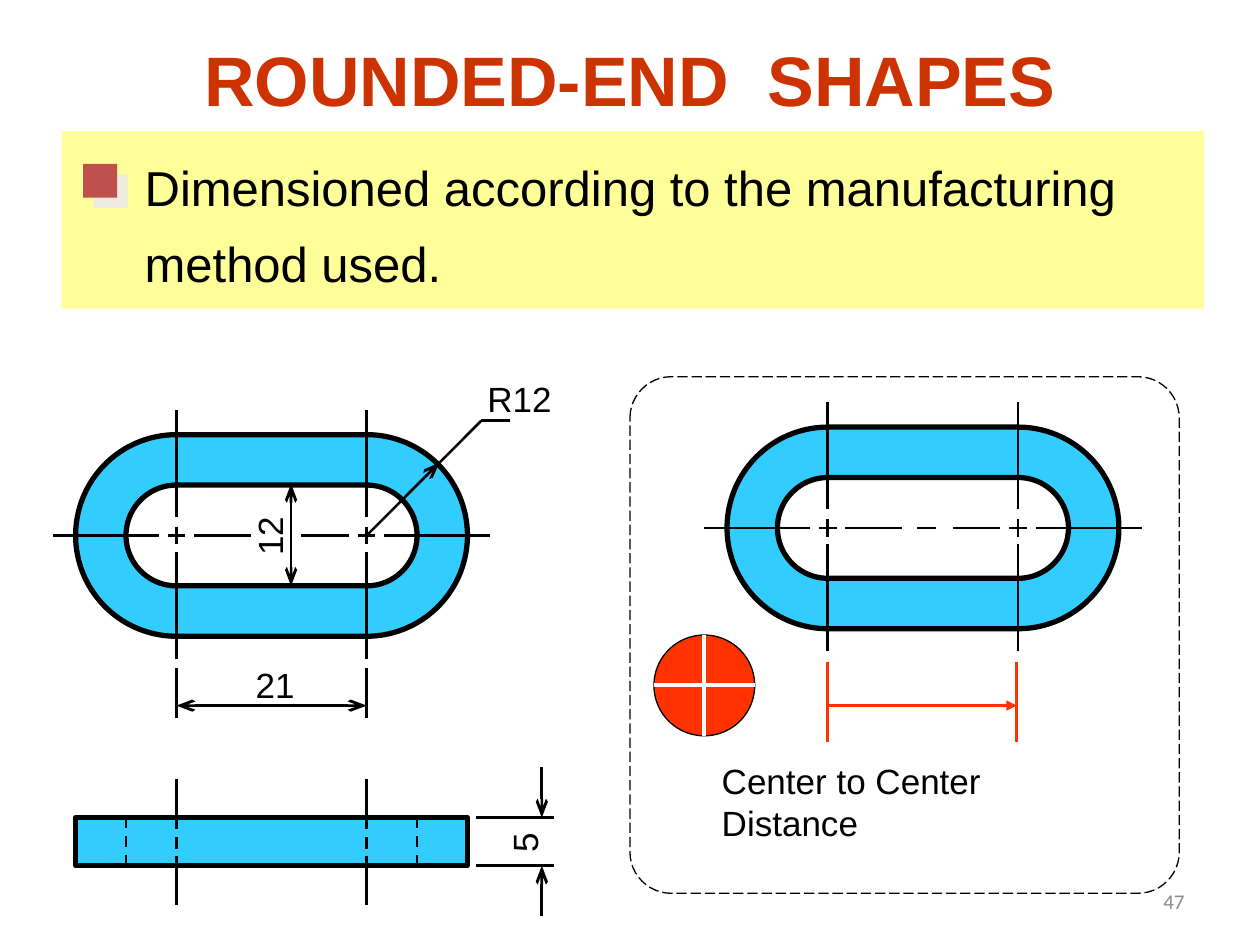
"""Build the slide on dimensioning rounded-end shapes."""
from lxml import etree
from pptx import Presentation
from pptx.dml.color import RGBColor
from pptx.enum.dml import MSO_LINE
from pptx.enum.shapes import MSO_CONNECTOR, MSO_SHAPE
from pptx.enum.text import MSO_ANCHOR, PP_ALIGN
from pptx.oxml.ns import qn
from pptx.util import Inches, Pt

RECT, ROUND, OVAL = MSO_SHAPE.RECTANGLE, MSO_SHAPE.ROUNDED_RECTANGLE, MSO_SHAPE.OVAL
STRAIGHT = MSO_CONNECTOR.STRAIGHT
DASH, LONG_DASH = MSO_LINE.DASH, MSO_LINE.LONG_DASH
TOP, MIDDLE = MSO_ANCHOR.TOP, MSO_ANCHOR.MIDDLE
LEFT, CENTER, RIGHT = PP_ALIGN.LEFT, PP_ALIGN.CENTER, PP_ALIGN.RIGHT

COLORS = {
    "black": "000000", "white": "FFFFFF", "part": "33CCFF", "title": "CC3300",
    "band": "FFFF99", "bullet": "C0504D", "shade": "EEECE1", "red": "FF3300",
    "number": "8C8C8C",
}
COLOR = {name: RGBColor.from_string(value) for name, value in COLORS.items()}

prs = Presentation()
prs.slide_width, prs.slide_height = Inches(10), Inches(7.5)
slide = prs.slides.add_slide(prs.slide_layouts[6])
shapes = slide.shapes


def add_line(x1, y1, x2, y2, color="black", width=1.5, dash=None, head=None, tail=None):
    line = shapes.add_connector(STRAIGHT, Inches(x1), Inches(y1), Inches(x2), Inches(y2))
    line.line.color.rgb = COLOR[color]
    line.line.width = Pt(width)
    if dash:
        line.line.dash_style = dash
    for tag, kind in (("a:headEnd", head), ("a:tailEnd", tail)):
        if kind:
            end = etree.SubElement(line.line._get_or_add_ln(), qn(tag))
            end.set("type", kind)
            end.set("len", "lg" if kind == "arrow" else "med")
    etree.SubElement(line._element.spPr, qn("a:effectLst"))


def add_text(lines, x, y, w, h, size=20, color="black", font="Arial", bold=False,
             align=LEFT, anchor=TOP, wrap=False, rotation=0, spacing=None):
    box = shapes.add_textbox(Inches(x), Inches(y), Inches(w), Inches(h))
    box.rotation = rotation
    frame = box.text_frame
    frame.word_wrap = wrap
    frame.vertical_anchor = anchor
    for index, words in enumerate(lines):
        paragraph = frame.paragraphs[0] if index == 0 else frame.add_paragraph()
        paragraph.alignment = align
        paragraph.line_spacing = spacing
        run = paragraph.add_run()
        run.text = words
        run.font.size, run.font.name, run.font.bold = Pt(size), font, bold
        run.font.color.rgb = COLOR[color]


LINK_X, LINK_Y = 1.4, 4.25
PITCH, OUTER, INNER = 1.51, 0.8, 0.4
SIDE_TOP, SIDE_BOTTOM = 6.49, 6.87
links = [(LINK_X, LINK_Y), (6.57, 4.19)]

outlines = [
    (RECT, 0.49, 1.04, 9.07, 1.41, "band", None, 0, None),
    (RECT, 0.66, 1.3, 0.27, 0.27, "bullet", None, 0, None),
    (ROUND, 5, 2.99, 4.36, 4.1, None, "black", 0.75, 0.08),
    (RECT, LINK_X - OUTER, SIDE_TOP, PITCH + 2 * OUTER, SIDE_BOTTOM - SIDE_TOP,
     "part", "black", 3, None),
    (OVAL, 5.19, 5.04, 0.8, 0.8, "red", "black", 0.75, None),
]
for x, y in links:
    for radius, fill in ((OUTER, "part"), (INNER, "white")):
        outlines.append((ROUND, x - radius, y - radius, PITCH + 2 * radius, 2 * radius,
                         fill, "black", 3, 0.5))

for kind, x, y, w, h, fill, edge, weight, corner in outlines:
    outline = shapes.add_shape(kind, Inches(x), Inches(y), Inches(w), Inches(h))
    outline.shadow.inherit = False
    if fill:
        outline.fill.solid()
        outline.fill.fore_color.rgb = COLOR[fill]
    else:
        outline.fill.background()
        outline.line.dash_style = LONG_DASH
    if edge:
        outline.line.color.rgb = COLOR[edge]
        outline.line.width = Pt(weight)
    else:
        outline.line.fill.background()
    if corner:
        outline.adjustments[0] = corner
    if fill == "bullet":
        effects = outline._element.spPr.find(qn("a:effectLst"))
        shadow = etree.SubElement(effects, qn("a:outerShdw"), dist=str(Pt(8.5)),
                                  dir="2700000", algn="ctr", rotWithShape="0")
        etree.SubElement(shadow, qn("a:srgbClr"), val=COLORS["shade"])

for x, y in links:
    for center, outward in ((x, -1), (x + PITCH, 1)):
        add_line(center, y - 0.15, center, y - 1)
        add_line(center, y + 0.13, center, y + 0.98)
        add_line(center - 0.07, y, center + 0.07, y)
        add_line(center, y - 0.07, center, y + 0.07)
        add_line(center + outward * 0.14, y, center + outward * 0.98, y)
    add_line(x + 0.14, y, x + 0.59, y)
    add_line(x + 0.99, y, x + 1.37, y)
add_line(7.28, 4.19, 7.43, 4.19)

for center in (LINK_X, LINK_X + PITCH):
    for start, end in ((6.18, 6.58), (6.64, 6.74), (6.79, 7.18)):
        add_line(center, start, center, end)
    add_line(center, 5.3, center, 5.7)
for hidden_edge in (LINK_X - INNER, LINK_X + PITCH + INNER):
    add_line(hidden_edge, SIDE_TOP, hidden_edge, SIDE_BOTTOM, dash=DASH)

add_line(LINK_X, 5.6, LINK_X + PITCH, 5.6, head="arrow", tail="arrow")
add_line(2.31, 4.65, 2.31, 3.84, head="arrow", tail="arrow")
add_line(2.91, 4.25, 3.49, 3.67, tail="arrow")
add_line(3.48, 3.68, 3.82, 3.34)
add_line(3.82, 3.34, 4.05, 3.34)
for edge_y, start_y in ((SIDE_TOP, 6.09), (SIDE_BOTTOM, 7.27)):
    add_line(3.78, edge_y, 4.4, edge_y)
    add_line(4.3, start_y, 4.3, edge_y, tail="arrow")

for center in (6.57, 8.07):
    add_line(center, 5.25, center, 5.89, "red")
add_line(6.57, 5.6, 8.07, 5.6, "red", tail="triangle")
add_line(5.59, 5.04, 5.59, 5.84, "white", 2.25)
add_line(5.19, 5.44, 5.99, 5.44, "white", 2.25)

add_text(["ROUNDED-END  SHAPES"], 0.75, 0, 8.5, 1.25, size=40, color="title", bold=True,
         align=CENTER, anchor=MIDDLE, wrap=True)
add_text(["Dimensioned according to the manufacturing", "method used."],
         1.05, 1.06, 8.12, 1.26, size=28, wrap=True, spacing=1.3)
add_text(["R12"], 3.77, 2.95, 0.71, 0.43)
add_text(["21"], 1.93, 5.22, 0.51, 0.43)
add_text(["12"], 1.88, 4.04, 0.51, 0.43, rotation=270)
add_text(["5"], 3.98, 6.47, 0.36, 0.43, rotation=270)
add_text(["Center to Center Distance"], 5.63, 5.98, 3, 0.74, wrap=True)
add_text(["47"], 7.17, 6.95, 2.33, 0.4, size=12, color="number", font="Calibri",
         align=RIGHT, anchor=MIDDLE, wrap=True)

prs.save("out.pptx")
